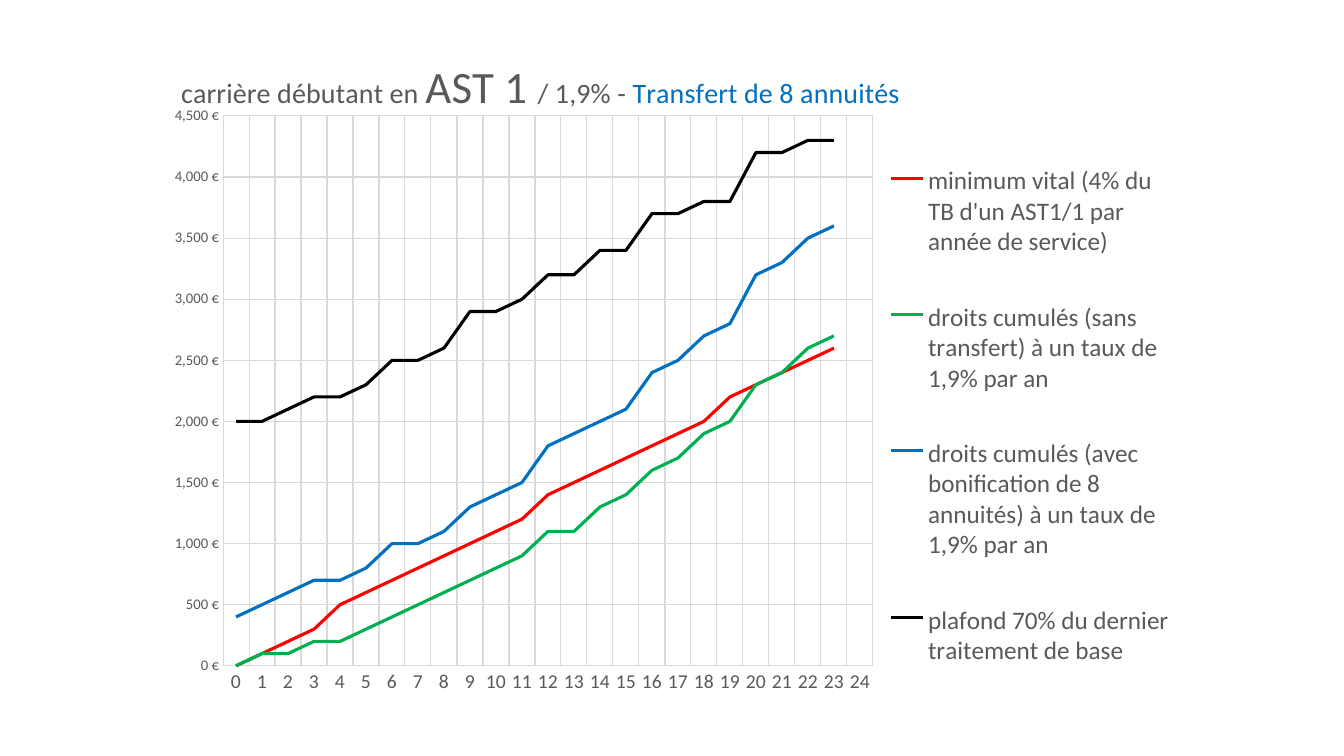
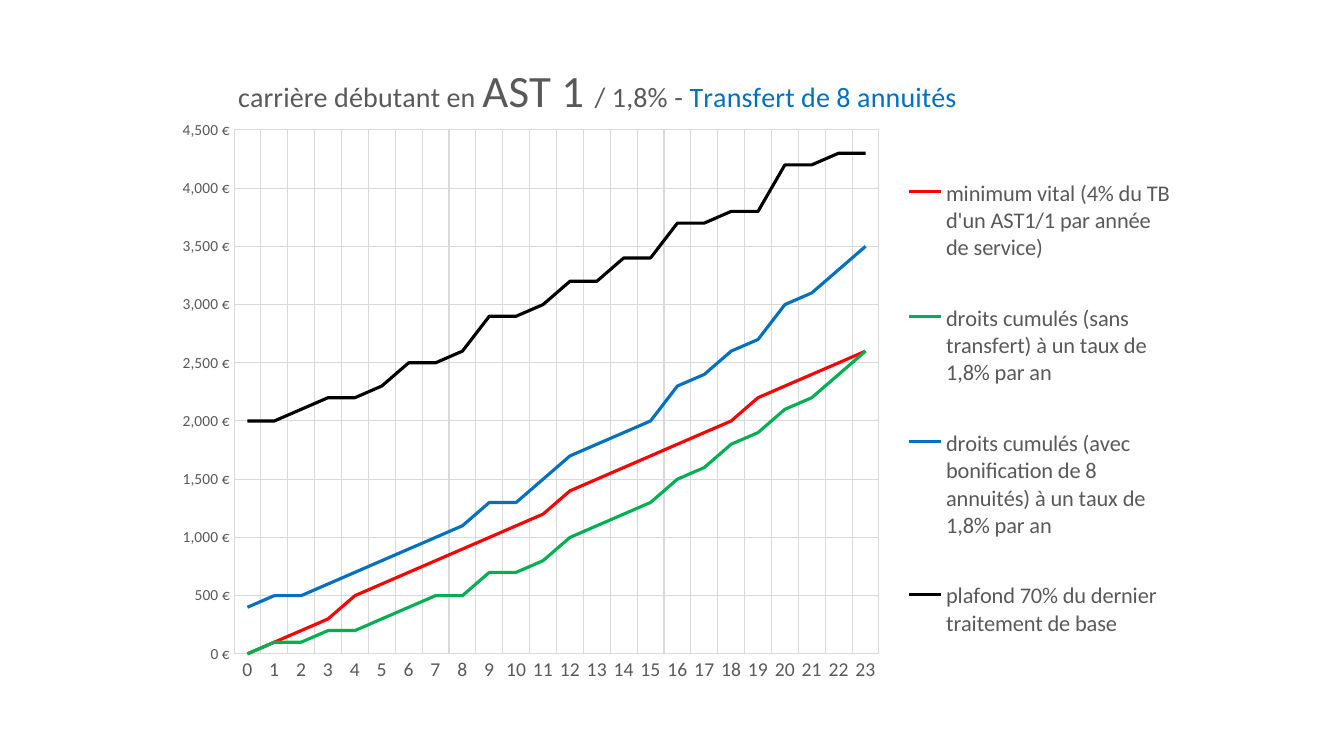
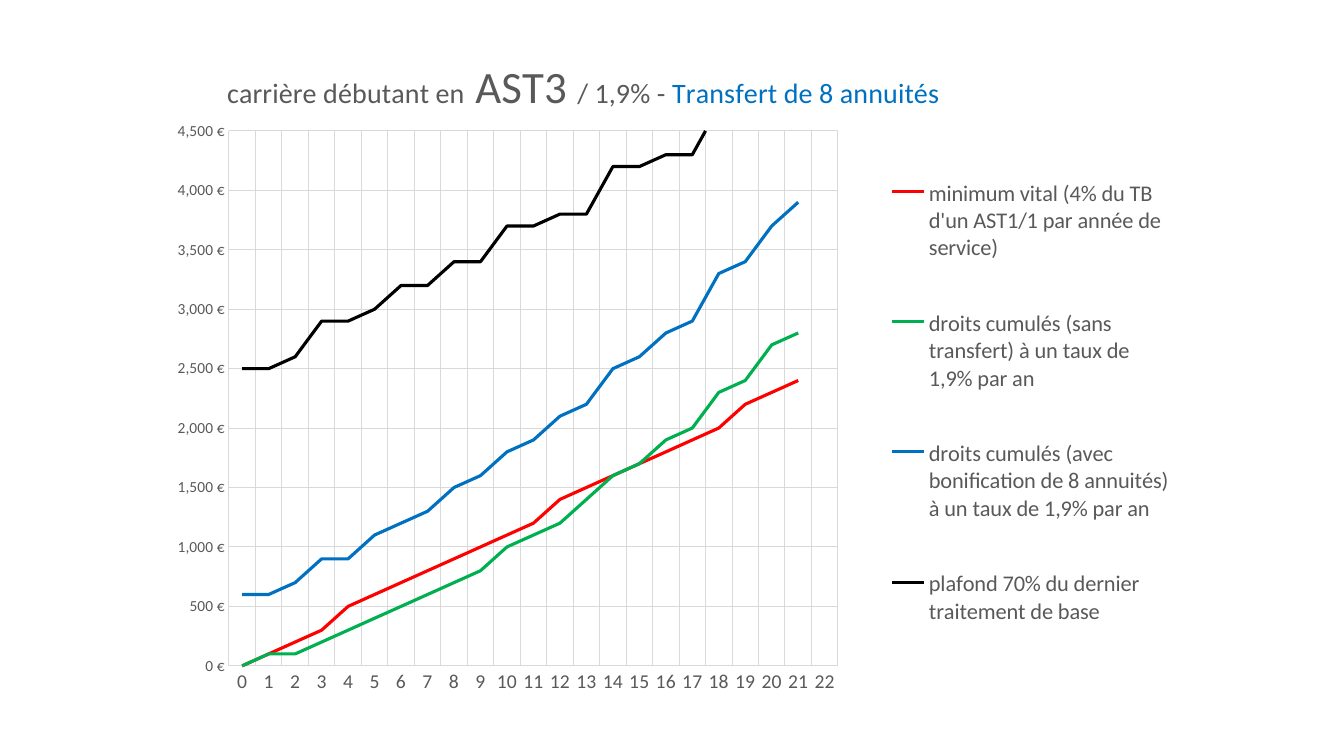
"""Build three slides charting pension rights against years of service."""
from dataclasses import dataclass

from lxml.etree import SubElement
from pptx import Presentation
from pptx.chart.chart import Chart
from pptx.chart.data import CategoryChartData
from pptx.dml.color import RGBColor
from pptx.enum.chart import XL_CHART_TYPE as ChartType
from pptx.enum.chart import XL_LEGEND_POSITION as LegendPosition
from pptx.enum.chart import XL_TICK_MARK as TickMark
from pptx.oxml.ns import qn
from pptx.util import Emu, Pt

FONT = "Calibri"
GRAY = RGBColor(0x59, 0x59, 0x59)
GRID = RGBColor(0xD9, 0xD9, 0xD9)
RED = RGBColor(0xFF, 0x00, 0x00)
GREEN = RGBColor(0x00, 0xB0, 0x50)
BLUE = RGBColor(0x00, 0x70, 0xC0)
BLACK = RGBColor(0x00, 0x00, 0x00)
SERIES_COLORS = (RED, GREEN, BLUE, BLACK)

PAGE_WIDTH, PAGE_HEIGHT = 1344, 756
EMU_PER_PX = 12192000 / PAGE_WIDTH
CHART_LEFT, CHART_TOP, CHART_WIDTH, CHART_HEIGHT = 159, 42, 1026, 670

MINIMUM = (0, 100, 200, 300, 500, 600, 700, 800, 900, 1000, 1100, 1200,
           1400, 1500, 1600, 1700, 1800, 1900, 2000, 2200, 2300, 2400, 2500, 2600)
CEILING = (2000, 2000, 2100, 2200, 2200, 2300, 2500, 2500, 2600, 2900, 2900, 3000,
           3200, 3200, 3400, 3400, 3700, 3700, 3800, 3800, 4200, 4200, 4300, 4300,
           4700, 4700, 4900, 4900)


@dataclass(frozen=True)
class Career:
    """One career scenario, with chart areas in px from the chart corner."""
    lead: str
    grade: str
    rate: str
    last_year: int
    first_step: int
    without_transfer: tuple[int, ...]
    with_transfer: tuple[int, ...]
    title_area: tuple[int, ...]
    plot_area: tuple[int, ...]
    legend_area: tuple[int, ...]
    value_size: float
    legend_size: int


CAREERS = (
    Career(
        "carrière débutant en ", "AST 1 ", "1,9%", 24, 0,
        (0, 100, 100, 200, 200, 300, 400, 500, 600, 700, 800, 900,
         1100, 1100, 1300, 1400, 1600, 1700, 1900, 2000, 2300, 2400, 2600, 2700),
        (400, 500, 600, 700, 700, 800, 1000, 1000, 1100, 1300, 1400, 1500,
         1800, 1900, 2000, 2100, 2400, 2500, 2700, 2800, 3200, 3300, 3500, 3600),
        (19, 13), (64, 74, 650, 550), (732, 79, 281, 590), 10.5, 18),
    Career(
        "carrière débutant en ", "AST 1 ", "1,8%", 23, 0,
        (0, 100, 100, 200, 200, 300, 400, 500, 500, 700, 700, 800,
         1000, 1100, 1200, 1300, 1500, 1600, 1800, 1900, 2100, 2200, 2400, 2600),
        (400, 500, 500, 600, 700, 800, 900, 1000, 1100, 1300, 1300, 1500,
         1700, 1800, 1900, 2000, 2300, 2400, 2600, 2700, 3000, 3100, 3300, 3500),
        (76, 17), (75, 88, 645, 524), (759, 95, 262, 544), 11, 16),
    Career(
        "carrière débutant en", " AST3 ", "1,9%", 22, 6,
        (0, 100, 100, 200, 300, 400, 500, 600, 700, 800, 1000, 1100,
         1200, 1400, 1600, 1700, 1900, 2000, 2300, 2400, 2700, 2800),
        (600, 600, 700, 900, 900, 1100, 1200, 1300, 1500, 1600, 1800, 1900,
         2100, 2200, 2500, 2600, 2800, 2900, 3300, 3400, 3700, 3900),
        (65, 13), (70, 89, 609, 535), (730, 90, 283, 542), 11, 16),
)


def px(length: int) -> Emu:
    """Turn px into EMU."""
    return Emu(round(length * EMU_PER_PX))


def style_font(font, *, size: float, color: RGBColor = GRAY) -> None:
    """Give a font the shared face, a size and a colour."""
    font.name = FONT
    font.size = Pt(size)
    font.bold = False
    font.color.rgb = color


def add_span(para, text: str, *, size: float = 20, color: RGBColor = GRAY) -> None:
    """Append formatted text to a paragraph."""
    span = para.add_run()
    span.text = text
    style_font(span.font, size=size, color=color)


def set_layout(parent, area: tuple[int, ...], position: int, inner: bool = False) -> None:
    """Place a chart part at an area given in px."""
    for old in parent.findall(qn("c:layout")):
        parent.remove(old)
    layout = SubElement(parent, qn("c:layout"))
    parent.insert(position, layout)
    manual = SubElement(layout, qn("c:manualLayout"))
    if inner:
        SubElement(manual, qn("c:layoutTarget")).set("val", "inner")
    for name in ("xMode", "yMode"):
        SubElement(manual, qn(f"c:{name}")).set("val", "edge")
    totals = (CHART_WIDTH, CHART_HEIGHT) * 2
    for name, length, total in zip("xywh", area, totals):
        SubElement(manual, qn(f"c:{name}")).set("val", f"{length / total:.4f}")


def chart_data(career: Career) -> CategoryChartData:
    """Collect the categories and the four series of a career."""
    count = len(career.without_transfer)
    data = CategoryChartData()
    data.categories = [str(year) for year in range(career.last_year + 1)]
    data.add_series("minimum vital (4% du TB d'un AST1/1 par année de service)", MINIMUM[:count])
    data.add_series(f"droits cumulés (sans transfert) à un taux de {career.rate} par an",
                    career.without_transfer)
    data.add_series("droits cumulés (avec bonification de 8 annuités) "
                    f"à un taux de {career.rate} par an", career.with_transfer)
    data.add_series("plafond 70% du dernier traitement de base",
                    CEILING[career.first_step:career.first_step + count])
    return data


def style_axis(axis, size: float) -> None:
    """Give an axis its labels and gridlines."""
    axis.major_tick_mark = axis.minor_tick_mark = TickMark.NONE
    style_font(axis.tick_labels.font, size=size)
    axis.has_major_gridlines = True
    grid_line = axis.major_gridlines.format.line
    grid_line.color.rgb = GRID
    grid_line.width = Pt(0.75)


def style_axes(chart: Chart, career: Career) -> None:
    """Format the year axis and the euro axis."""
    years, euros = chart.category_axis, chart.value_axis
    style_axis(years, 14)
    years.format.line.color.rgb = GRID
    years.format.line.width = Pt(0.75)
    style_axis(euros, career.value_size)
    euros.format.line.fill.background()
    euros.minimum_scale, euros.maximum_scale, euros.major_unit = 0, 4500, 500
    euros.tick_labels.number_format = r"#,##0\ \€"
    euros.tick_labels.number_format_is_linked = False


def add_title(chart: Chart, career: Career) -> None:
    """Write the chart title with its large grade and blue ending."""
    chart.has_title = True
    para = chart.chart_title.text_frame.paragraphs[0]
    add_span(para, career.lead)
    add_span(para, career.grade, size=32)
    add_span(para, f"/ {career.rate} - ")
    add_span(para, "Transfert de 8 annuités", color=BLUE)
    set_layout(chart.element.find(f".//{qn('c:title')}"), career.title_area, 1)


def add_legend(chart: Chart, career: Career) -> None:
    """Put the legend right of the plot."""
    chart.has_legend = True
    chart.legend.position = LegendPosition.RIGHT
    chart.legend.include_in_layout = False
    style_font(chart.legend.font, size=career.legend_size)
    set_layout(chart.element.find(f".//{qn('c:legend')}"), career.legend_area, 1)


def add_career(deck, career: Career) -> None:
    """Add a page with the chart of one career."""
    page = deck.slides.add_slide(deck.slide_layouts[6])
    frame = page.shapes.add_chart(
        ChartType.LINE, px(CHART_LEFT), px(CHART_TOP), px(CHART_WIDTH), px(CHART_HEIGHT),
        chart_data(career))
    chart = frame.chart
    style_font(chart.font, size=10, color=BLACK)
    add_title(chart, career)
    add_legend(chart, career)
    style_axes(chart, career)
    set_layout(chart.element.find(f".//{qn('c:plotArea')}"), career.plot_area, 0, inner=True)
    chart.plots[0].vary_by_categories = False
    for series, color in zip(chart.plots[0].series, SERIES_COLORS):
        series.smooth = False
        series.format.line.color.rgb = color
        series.format.line.width = Pt(2.25)


def main() -> None:
    """Build and save the deck."""
    deck = Presentation()
    deck.slide_width, deck.slide_height = px(PAGE_WIDTH), px(PAGE_HEIGHT)
    for career in CAREERS:
        add_career(deck, career)
    deck.save("out.pptx")


if __name__ == "__main__":
    main()
